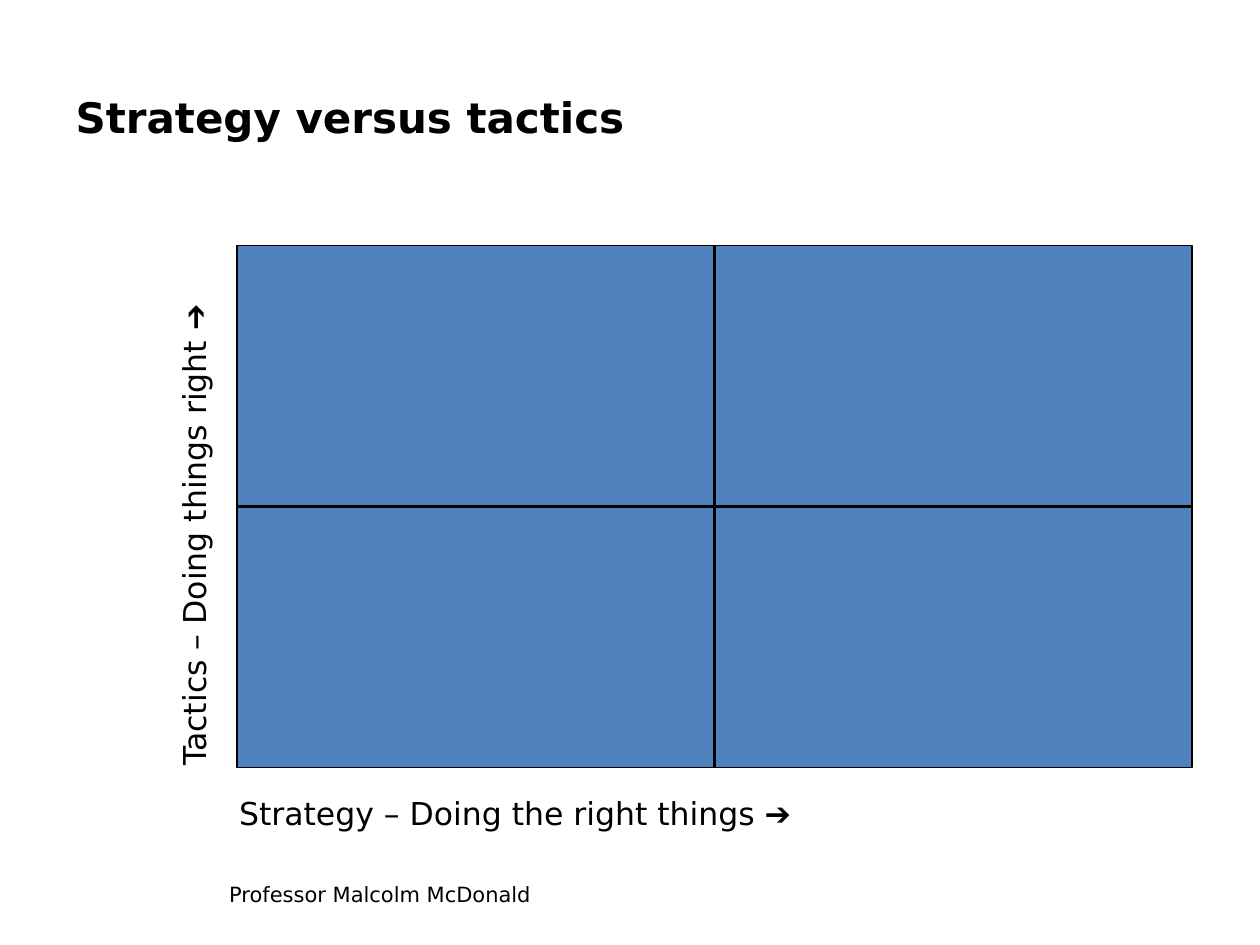
from lxml import etree
from pptx import Presentation
from pptx.dml.color import RGBColor
from pptx.enum import shapes, text
from pptx.oxml.ns import qn
from pptx.util import Cm, Pt

# Content
TITLE = "Strategy versus tactics"
# wording, left, top, width, height (cm), rotation, size name
LABELS = [
    ("Strategy – Doing the right things ➔", 4.57, 15.88, 18.47, 1.02, 0, "axis"),
    ("Tactics – Doing things right ➔", -5.33, 5.94, 18.47, 1.02, 270, "axis"),
    ("Professor Malcolm McDonald", 4.37, 17.65, 18.47, 0.76, 0, "credit"),
]
MATRIX = (4.78, 4.95, 19.25, 10.52)
TITLE_AREA = (1.27, 0.76, 22.86, 3.18)
# Side numbers that each divider joins
DIVIDERS = [(0, 2), (1, 3)]

THEME = {
    "font": "DejaVu Sans",
    "ink": RGBColor(0, 0, 0),
    "fill": RGBColor(0x4F, 0x81, 0xBD),
    "title": Pt(24),
    "axis": Pt(18),
    "credit": Pt(12),
    "outline": Pt(0.75),
    "divider": Pt(1.5),
}


def write(box, wording, size, bold=False):
    frame = box.text_frame
    frame.word_wrap = True
    para = frame.paragraphs[0]
    para.text = wording
    para.alignment = text.PP_ALIGN.LEFT
    para.font.name = THEME["font"]
    para.font.size = THEME[size]
    para.font.bold = bold
    para.font.color.rgb = THEME["ink"]


deck = Presentation()
deck.slide_width, deck.slide_height = Cm(25.4), Cm(19.05)
page = deck.slides.add_slide(deck.slide_layouts[5])

# Matrix
matrix = page.shapes.add_shape(shapes.MSO_SHAPE.RECTANGLE, *map(Cm, MATRIX))
matrix.shadow.inherit = False
matrix.fill.solid()
matrix.fill.fore_color.rgb = THEME["fill"]
matrix.line.color.rgb = THEME["ink"]
matrix.line.width = THEME["outline"]

# Dividers between the quadrants
for start, end in DIVIDERS:
    divider = page.shapes.add_connector(shapes.MSO_CONNECTOR.STRAIGHT, 0, 0, 0, 0)
    divider.begin_connect(matrix, start)
    divider.end_connect(matrix, end)
    divider.line.color.rgb = THEME["ink"]
    divider.line.width = THEME["divider"]
    etree.SubElement(divider._element.spPr, qn("a:effectLst"))

# Title
title = page.shapes.title
title.left, title.top, title.width, title.height = map(Cm, TITLE_AREA)
title.text_frame.vertical_anchor = text.MSO_ANCHOR.MIDDLE
write(title, TITLE, "title", bold=True)

# Axis labels and credit
for wording, left, top, width, height, rotation, size in LABELS:
    label = page.shapes.add_textbox(Cm(left), Cm(top), Cm(width), Cm(height))
    label.rotation = rotation
    label.text_frame.auto_size = text.MSO_AUTO_SIZE.SHAPE_TO_FIT_TEXT
    write(label, wording, size)

deck.save("out.pptx")
